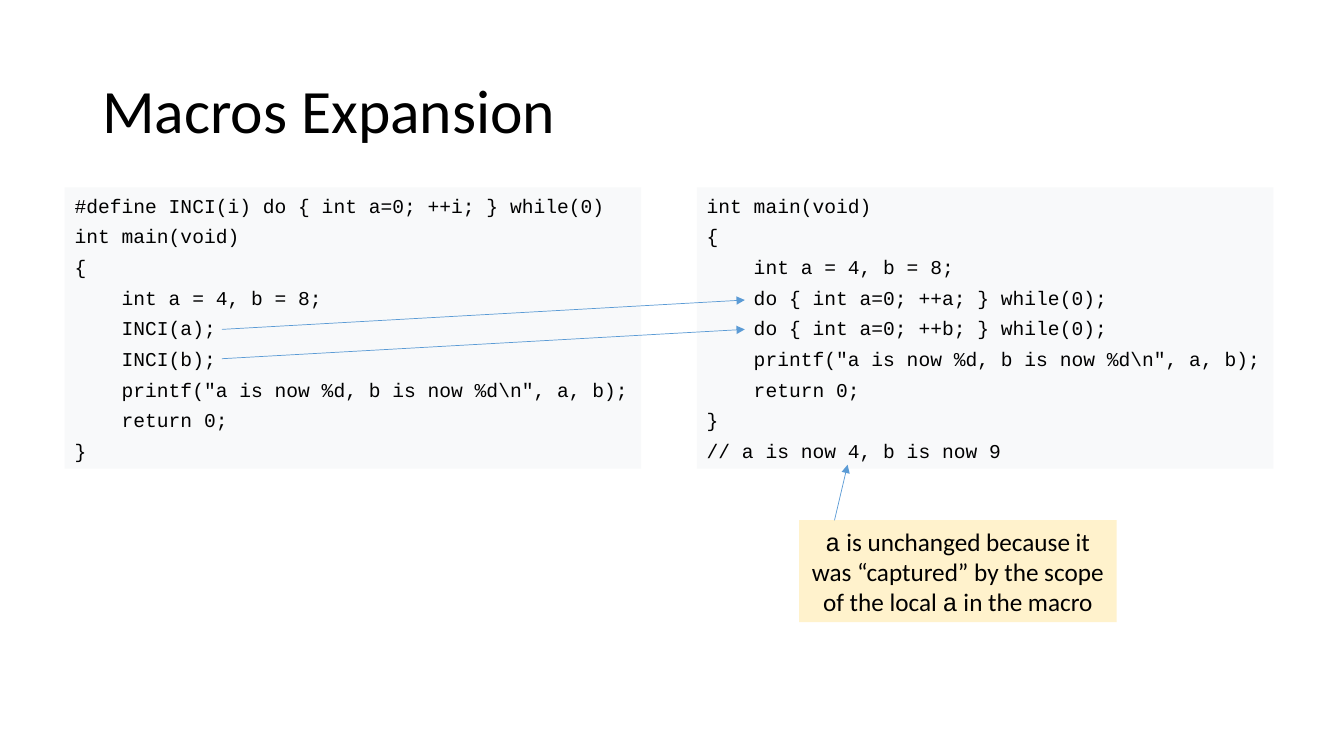
import pptx
import pptx.util
import pptx.dml.color
import pptx.enum.shapes
import pptx.enum.text
import pptx.oxml

Cm, Pt = pptx.util.Cm, pptx.util.Pt
MSO = pptx.enum.text.MSO_AUTO_SIZE
MID = pptx.enum.text.MSO_ANCHOR.MIDDLE
ALIGN = pptx.enum.text.PP_ALIGN

SANS, MONO = "Calibri", "Courier New"
BLACK, PALE, CREAM, BLUE = "000000", "F8F9FA", "FFF2CC", "5B9BD5"

TITLE = "Macros Expansion"
MACRO = [
    "#define INCI(i) do { int a=0; ++i; } while(0)",
    "int main(void)",
    "{",
    "    int a = 4, b = 8;",
    "    INCI(a);",
    "    INCI(b);",
    '    printf("a is now %d, b is now %d\\n", a, b);',
    "    return 0;",
    "}",
]
RESULT = [
    "int main(void)",
    "{",
    "    int a = 4, b = 8;",
    "    do { int a=0; ++a; } while(0);",
    "    do { int a=0; ++b; } while(0);",
    '    printf("a is now %d, b is now %d\\n", a, b);',
    "    return 0;",
    "}",
    "// a is now 4, b is now 9",
]
NOTE = [
    ("a", MONO),
    (" is unchanged because it was “captured” by the scope of the local ", SANS),
    ("a", MONO),
    (" in the macro", SANS),
]
LINKS = [(4, 3), (5, 4)]

LEFT, TOP, WIDE, HIGH, GAP = 1.63, 4.72, 14.53, 7.09, 1.3
FIRST, PITCH = 5.34, 0.74
NOTE_TOP = 13.11


def color(code):
    return pptx.dml.color.RGBColor.from_string(code)


def style(font, name, size):
    font.name = name
    font.size = Pt(size)
    font.color.rgb = color(BLACK)


def panel(slide, x, y, w, h, fill):
    box = slide.shapes.add_shape(
        pptx.enum.shapes.MSO_SHAPE.RECTANGLE, Cm(x), Cm(y), Cm(w), Cm(h))
    box.shadow.inherit = False
    box.fill.solid()
    box.fill.fore_color.rgb = color(fill)
    box.line.fill.background()
    frame = box.text_frame
    frame.vertical_anchor = MID
    frame.auto_size = MSO.SHAPE_TO_FIT_TEXT
    return frame


def code(slide, x, lines):
    frame = panel(slide, x, TOP, WIDE, HIGH, PALE)
    frame.word_wrap = False
    for i, line in enumerate(lines):
        para = frame.paragraphs[0] if i == 0 else frame.add_paragraph()
        para.text = line
        para.alignment = ALIGN.LEFT
        para.space_before = Pt(5.1)
        style(para.font, MONO, 14)


def arrow(slide, x1, y1, x2, y2):
    line = slide.shapes.add_connector(
        pptx.enum.shapes.MSO_CONNECTOR.STRAIGHT, Cm(x1), Cm(y1), Cm(x2), Cm(y2))
    line.line.color.rgb = color(BLUE)
    line.line.width = Pt(0.5)
    ns = 'xmlns:a="http://schemas.openxmlformats.org/drawingml/2006/main"'
    edge = line.line._get_or_add_ln()
    edge.append(pptx.oxml.parse_xml(f'<a:tailEnd {ns} type="triangle"/>'))
    edge.addnext(pptx.oxml.parse_xml(f"<a:effectLst {ns}/>"))


def row(i):
    return FIRST + PITCH * i


def main():
    deck = pptx.Presentation()
    deck.slide_width, deck.slide_height = Cm(33.87), Cm(19.05)
    slide = deck.slides.add_slide(deck.slide_layouts[6])

    head = slide.shapes.add_textbox(Cm(2.33), Cm(1.01), Cm(29.21), Cm(3.68))
    frame = head.text_frame
    frame.word_wrap = True
    frame.vertical_anchor = MID
    para = frame.paragraphs[0]
    para.text = TITLE
    para.line_spacing = 0.9
    style(para.font, SANS, 44)

    for i, lines in enumerate((MACRO, RESULT)):
        code(slide, LEFT + i * (WIDE + GAP + 0.1), lines)
    for start, end in LINKS:
        arrow(slide, 5.59, row(start), 18.77, row(end))

    frame = panel(slide, 20.14, NOTE_TOP, 8, 2.57, CREAM)
    frame.word_wrap = True
    para = frame.paragraphs[0]
    para.alignment = ALIGN.CENTER
    for text, name in NOTE:
        run = para.add_run()
        run.text = text
        style(run.font, name, 18)
    arrow(slide, 21.03, NOTE_TOP, 21.36, 11.71)

    deck.save("out.pptx")


if __name__ == "__main__":
    main()
